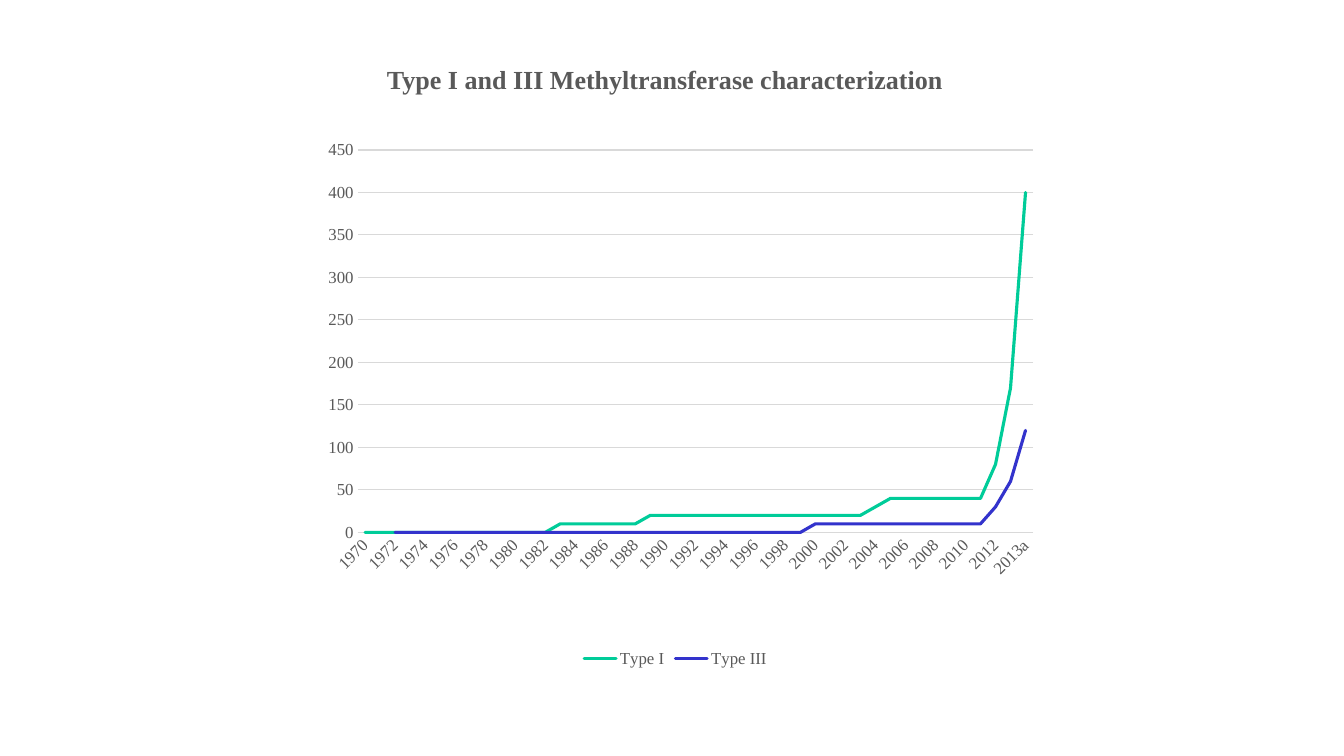
from lxml import etree
from pptx import Presentation
from pptx.chart.data import CategoryChartData
from pptx.dml.color import RGBColor
from pptx.enum.chart import XL_CHART_TYPE, XL_LEGEND_POSITION, XL_TICK_MARK
from pptx.enum.text import MSO_ANCHOR, PP_ALIGN
from pptx.oxml import parse_xml
from pptx.oxml.ns import nsdecls, qn
from pptx.util import Inches, Pt

LINE_CHART = XL_CHART_TYPE.LINE
LEGEND_BOTTOM = XL_LEGEND_POSITION.BOTTOM
NO_TICK = XL_TICK_MARK.NONE
CENTER = PP_ALIGN.CENTER
MIDDLE = MSO_ANCHOR.MIDDLE

COLORS = {"text": "595959", "grid": "D9D9D9", "Type I": "00CC99", "Type III": "3333CC"}
YEARS = [str(year) for year in range(1970, 2014)] + ["2013a"]
COUNTS = {
    "Type I": [0] * 13 + [10] * 6 + [20] * 15 + [30] + [40] * 7 + [80, 170, 400],
    "Type III": [None] * 2 + [0] * 28 + [10] * 12 + [30, 60, 120],
}
PLOT_AREA = {"x": 0.075, "y": 0.125, "w": 0.903, "h": 0.642}


class SlideBuilder:
    def __init__(self, slide, font_name, colors):
        self.slide = slide
        self.font_name = font_name
        self.colors = colors

    def color(self, name):
        return RGBColor.from_string(self.colors[name])

    def set_font(self, font, size, bold=False):
        font.name = self.font_name
        font.size = Pt(size)
        font.bold = bold
        font.color.rgb = self.color("text")

    def set_line(self, line, color_name, width):
        line.color.rgb = self.color(color_name)
        line.width = Pt(width)

    def add_title(self, text, left, top, width, height, size):
        box = self.slide.shapes.add_textbox(
            Inches(left), Inches(top), Inches(width), Inches(height))
        frame = box.text_frame
        frame.word_wrap = True
        frame.vertical_anchor = MIDDLE
        paragraph = frame.paragraphs[0]
        paragraph.text = text
        paragraph.alignment = CENTER
        self.set_font(paragraph.font, size, bold=True)

    def add_line_chart(self, categories, series_values, left, top, width, height):
        data = CategoryChartData()
        data.categories = categories
        for name, values in series_values.items():
            data.add_series(name, values)
        chart = self.slide.shapes.add_chart(
            LINE_CHART, Inches(left), Inches(top), Inches(width), Inches(height), data).chart
        chart.has_title = False
        self.set_font(chart.font, 12)
        chart.has_legend = True
        chart.legend.position = LEGEND_BOTTOM
        chart.legend.include_in_layout = False
        self.set_font(chart.legend.font, 12)
        plot = chart.plots[0]
        plot.vary_by_categories = False
        for series in plot.series:
            series.smooth = False
            self.set_line(series.format.line, series.name, 2.25)
            series.format.line._get_or_add_ln().set("cap", "rnd")
        self.style_axes(chart)
        self.place_plot(chart, PLOT_AREA)

    def style_axes(self, chart):
        years, counts = chart.category_axis, chart.value_axis
        for axis in (years, counts):
            axis.major_tick_mark = NO_TICK
            axis.minor_tick_mark = NO_TICK
            self.set_font(axis.tick_labels.font, 12)
        years.has_major_gridlines = False
        self.set_line(years.format.line, "grid", 0.75)
        years._element.txPr.find(qn("a:bodyPr")).set("rot", "-2700000")
        label_skip = parse_xml(f'<c:tickLblSkip {nsdecls("c")} val="2"/>')
        years._element.find(qn("c:noMultiLvlLbl")).addprevious(label_skip)
        counts.minimum_scale = 0
        counts.maximum_scale = 450
        counts.major_unit = 50
        counts.format.line.fill.background()
        counts.has_major_gridlines = True
        self.set_line(counts.major_gridlines.format.line, "grid", 0.75)

    def place_plot(self, chart, area):
        plot_area = chart._chartSpace.chart.plotArea
        for old_layout in plot_area.findall(qn("c:layout")):
            plot_area.remove(old_layout)
        layout = etree.Element(qn("c:layout"))
        manual = etree.SubElement(layout, qn("c:manualLayout"))
        settings = {"layoutTarget": "inner", "xMode": "edge", "yMode": "edge", **area}
        for name, value in settings.items():
            etree.SubElement(manual, qn(f"c:{name}")).set("val", str(value))
        plot_area.insert(0, layout)


def main():
    presentation = Presentation()
    presentation.slide_width = Inches(13.33)
    presentation.slide_height = Inches(7.5)
    slide = presentation.slides.add_slide(presentation.slide_layouts[6])
    builder = SlideBuilder(slide, "Times New Roman", COLORS)
    builder.add_line_chart(YEARS, COUNTS, 2.99, 0.75, 7.42, 5.91)
    builder.add_title(
        "Type I and III Methyltransferase characterization", 3.51, 0.58, 6.17, 0.41, 18.6)
    presentation.save("out.pptx")


if __name__ == "__main__":
    main()
